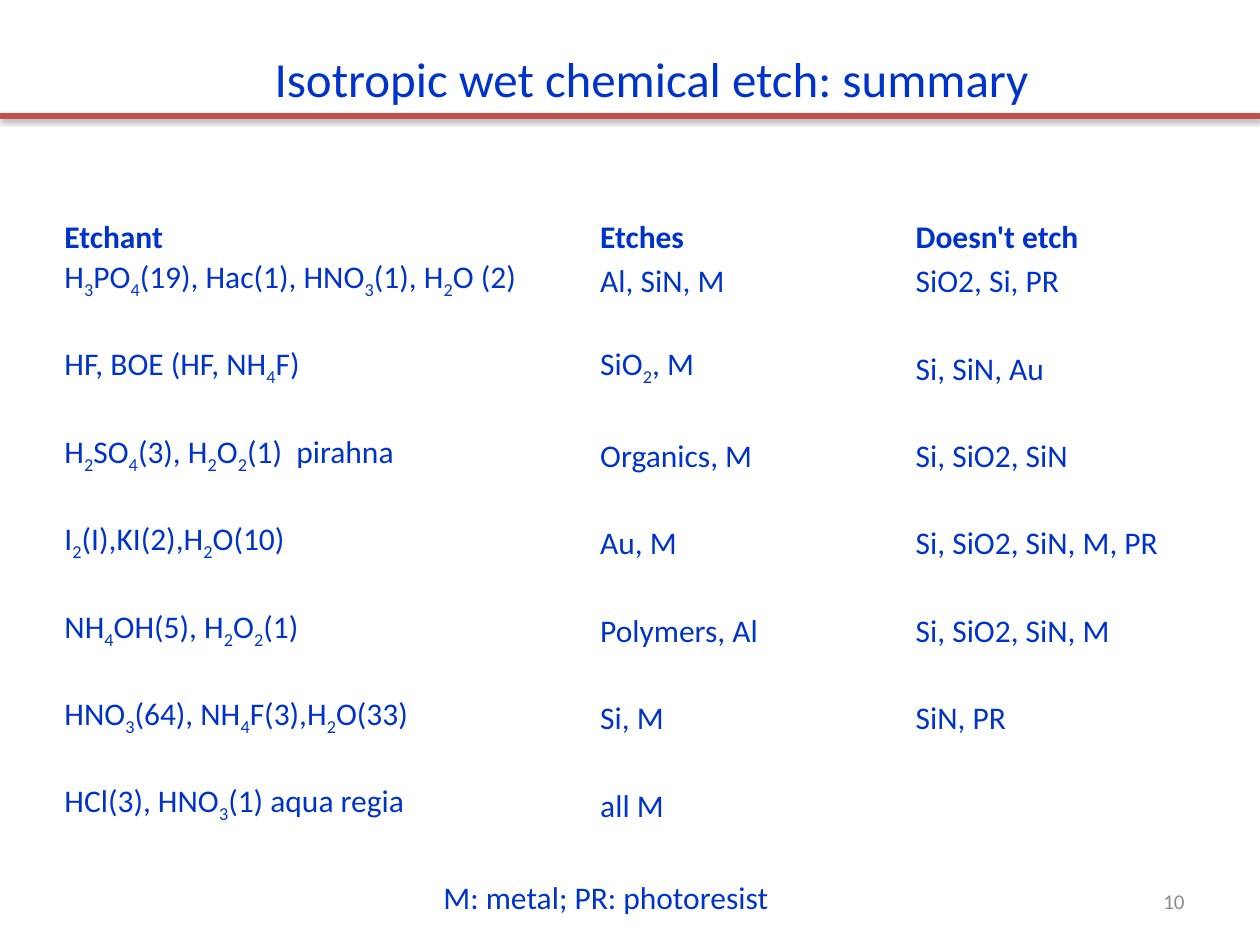
from dataclasses import dataclass

import pptx
import pptx.dml.color
import pptx.enum.text
import pptx.oxml
import pptx.oxml.ns
import pptx.util

Cm = pptx.util.Cm
Anchor = pptx.enum.text.MSO_ANCHOR
Align = pptx.enum.text.PP_ALIGN


@dataclass(frozen=True)
class Theme:
    font: str = "Calibri"
    ink: str = "0033CC"
    rule: str = "C0504D"
    muted: str = "8C8C8C"
    title: int = 28
    body: int = 18
    number: int = 12


@dataclass(frozen=True)
class Entry:
    text: str
    span: int


@dataclass(frozen=True)
class Etch:
    etchant: Entry
    etches: Entry
    resists: Entry


@dataclass(frozen=True)
class Box:
    left: float
    top: float
    width: float
    height: float

    def lengths(self) -> tuple:
        return Cm(self.left), Cm(self.top), Cm(self.width), Cm(self.height)


THEME = Theme()
NONE = Entry("", 1)
HEADER = Etch(Entry("Etchant", 2), Entry("Etches", 2), Entry("Doesn't etch", 3))
ETCHES = [
    Etch(Entry("H_3PO_4(19), Hac(1), HNO_3(1), H_2O (2)", 4), Entry("Al, SiN, M", 2), Entry("SiO2, Si, PR", 3)),
    Etch(Entry("HF, BOE (HF, NH_4F)", 4), Entry("SiO_2, M", 2), Entry("Si, SiN, Au", 2)),
    Etch(Entry("H_2SO_4(3), H_2O_2(1)  pirahna", 4), Entry("Organics, M", 3), Entry("Si, SiO2, SiN", 3)),
    Etch(Entry("I_2(I),KI(2),H_2O(10)", 4), Entry("Au, M", 2), Entry("Si, SiO2, SiN, M, PR", 4)),
    Etch(Entry("NH_4OH(5), H_2O_2(1)", 4), Entry("Polymers, Al", 3), Entry("Si, SiO2, SiN, M", 3)),
    Etch(Entry("HNO_3(64), NH_4F(3),H_2O(33)", 4), Entry("Si, M", 1), Entry("SiN, PR", 2)),
    Etch(Entry("HCl(3), HNO_3(1) aqua regia", 4), Entry("all M", 1), NONE),
]
COLUMNS, WIDE_COLUMN = 12, 3
STARTS = (0, 4, 8)


def rgb(value: str) -> pptx.dml.color.RGBColor:
    return pptx.dml.color.RGBColor.from_string(value)


def style(p, size: int, color: str, bold: bool = False) -> None:
    p.font.name = THEME.font
    p.font.size = pptx.util.Pt(size)
    p.font.bold = bold
    p.font.color.rgb = rgb(color)


def add_run(p, text: str, subscript: bool = False) -> None:
    if text:
        r = p.add_run()
        r.text = text
        if subscript:
            r._r.get_or_add_rPr().set("baseline", "-25000")


def write_formula(p, text: str) -> None:
    first, *rest = text.split("_")
    add_run(p, first)
    for part in rest:
        add_run(p, part[0], subscript=True)
        add_run(p, part[1:])


def fill_row(table, row: int, etch: Etch, bold: bool = False) -> None:
    for start, entry in zip(STARTS, (etch.etchant, etch.etches, etch.resists)):
        cell = table.cell(row, start)
        if entry.span > 1:
            cell.merge(table.cell(row, start + entry.span - 1))
        p = cell.text_frame.paragraphs[0]
        style(p, THEME.body, THEME.ink, bold)
        write_formula(p, entry.text)


def add_etch_table(s, box: Box) -> None:
    table = s.shapes.add_table(2 * len(ETCHES), COLUMNS, *box.lengths()).table
    table.first_row = False
    table.horz_banding = False
    for i, column in enumerate(table.columns):
        column.width = Cm(6.03 if i == WIDE_COLUMN else 1.59)
    for i, row in enumerate(table.rows):
        row.height = Cm(0.87 if i else 0.94)
    for cell in table.iter_cells():
        cell.fill.background()
        cell.vertical_anchor = Anchor.BOTTOM
        cell.margin_left = cell.margin_right = cell.margin_top = Cm(0.03)
        cell.margin_bottom = 0
    fill_row(table, 0, HEADER, bold=True)
    for i, etch in enumerate(ETCHES):
        fill_row(table, 2 * i + 1, etch)


def add_rule(s, top: float, width: int) -> None:
    line = s.shapes.add_connector(1, 0, Cm(top), width, Cm(top))
    line.line.color.rgb = rgb(THEME.rule)
    line.line.width = pptx.util.Pt(3)
    line._element.spPr.append(pptx.oxml.parse_xml(
        f'<a:effectLst {pptx.oxml.ns.nsdecls("a")}>'
        '<a:outerShdw blurRad="40000" dist="20000" dir="5400000" rotWithShape="0">'
        '<a:srgbClr val="000000"><a:alpha val="38000"/></a:srgbClr>'
        '</a:outerShdw></a:effectLst>'))


def set_title(s, box: Box, text: str) -> None:
    sp = s.shapes.title
    sp.left, sp.top, sp.width, sp.height = box.lengths()
    tf = sp.text_frame
    tf.text = text
    tf.word_wrap = False
    tf.auto_size = pptx.enum.text.MSO_AUTO_SIZE.NONE
    tf.vertical_anchor = Anchor.TOP
    p = tf.paragraphs[0]
    p.alignment = Align.LEFT
    style(p, THEME.title, THEME.ink)


def add_legend(s, box: Box, text: str) -> None:
    tf = s.shapes.add_textbox(*box.lengths()).text_frame
    tf.text = text
    tf.word_wrap = False
    style(tf.paragraphs[0], THEME.body, THEME.ink)


def add_slide_number(s, box: Box, number: int) -> None:
    tf = s.shapes.add_textbox(*box.lengths()).text_frame
    tf.word_wrap = True
    tf.vertical_anchor = Anchor.MIDDLE
    p = tf.paragraphs[0]
    p.alignment = Align.RIGHT
    style(p, THEME.number, THEME.muted)
    add_run(p, str(number))


def main() -> None:
    prs = pptx.Presentation()
    prs.slide_width, prs.slide_height = Cm(25.4), Cm(19.05)
    s = prs.slides.add_slide(prs.slide_layouts.get_by_name("Title Only"))
    add_etch_table(s, Box(1.27, 4.24, 23.5, 12.07))
    add_rule(s, 2.34, prs.slide_width)
    set_title(s, Box(5.28, 0.86, 15.88, 1.45), "Isotropic wet chemical etch: summary")
    add_legend(s, Box(8.69, 17.58, 7.14, 1.02), "M: metal; PR: photoresist")
    add_slide_number(s, Box(18.21, 17.65, 5.92, 1.02), 10)
    prs.save("out.pptx")


if __name__ == "__main__":
    main()
